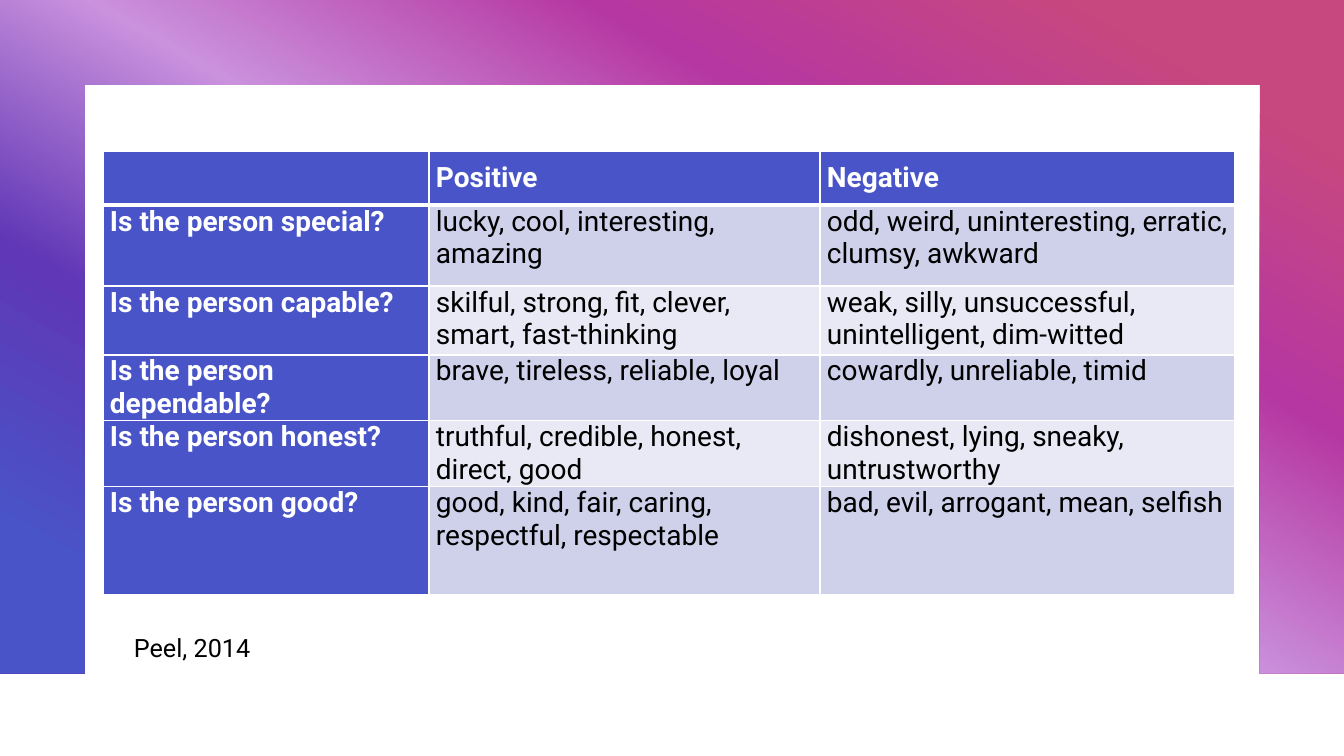
from lxml import etree
from pptx import Presentation
from pptx.dml.color import RGBColor
from pptx.enum.text import MSO_ANCHOR
from pptx.oxml import parse_xml
from pptx.util import Emu, Pt

MIDDLE, TOP = MSO_ANCHOR.MIDDLE, MSO_ANCHOR.TOP
NS = "http://schemas.openxmlformats.org/drawingml/2006/main"
FONT = "Roboto"
BLUE, WHITE, BLACK = "4854C7", "FFFFFF", "000000"
BANDS = ["CFD1EB", "E9E9F5"]
STOPS = [(10, "C7487E"), (30, "B637A1"), (50, "CA91DD"), (70, "6037B6"), (90, BLUE)]
COLS = [326, 391, 415]
ROWS = [54, 81, 69, 62, 62, 108]
WORDS = [
    ("", "Positive", "Negative"),
    ("Is the person special?", "lucky, cool, interesting, amazing",
     "odd, weird, uninteresting, erratic, clumsy, awkward"),
    ("Is the person capable?", "skilful, strong, fit, clever, smart, fast-thinking",
     "weak, silly, unsuccessful, unintelligent, dim-witted"),
    ("Is the person dependable?", "brave, tireless, reliable, loyal",
     "cowardly, unreliable, timid"),
    ("Is the person honest?", "truthful, credible, honest, direct, good",
     "dishonest, lying, sneaky, untrustworthy"),
    ("Is the person good?", "good, kind, fair, caring, respectful, respectable",
     "bad, evil, arrogant, mean, selfish"),
]


def px(n):
    return Emu(round(n * 914400 / 100.8))


def color(code):
    return RGBColor.from_string(code)


def style(para, size, code, bold=False):
    font = para.font
    font.name, font.size, font.bold = FONT, Pt(size), bold
    font.color.rgb = color(code)


def blend(shape, stops, angle):
    """Fill a shape with a linear gradient, angle clockwise in degrees."""
    shape.fill.background()
    props = shape._element.spPr
    marks = "".join(
        f'<a:gs pos="{pos * 1000}"><a:srgbClr val="{code}"/></a:gs>'
        for pos, code in stops)
    grad = parse_xml(
        f'<a:gradFill xmlns:a="{NS}" rotWithShape="1"><a:gsLst>{marks}</a:gsLst>'
        f'<a:lin ang="{angle * 60000}" scaled="0"/></a:gradFill>')
    props.replace(props.find(f"{{{NS}}}noFill"), grad)


def add_frame(slide, left, top, width, height):
    side, right, low = left + 85, left + width, top + height
    inner = right - 84
    points = [(right, top), (right, low), (inner, low), (inner, top + 85),
              (side, top + 85), (side, low), (left, low)]
    pen = slide.shapes.build_freeform(px(left), px(top))
    pen.add_line_segments([(px(x), px(y)) for x, y in points], close=True)
    frame = pen.convert_to_shape()
    frame.shadow.inherit = False
    frame.line.fill.background()
    blend(frame, STOPS, 120)


def set_edges(cell, widths):
    props = cell._tc.get_or_add_tcPr()
    for i, (side, width) in enumerate(widths.items()):
        line = etree.Element(f"{{{NS}}}ln{side}", w=str(Pt(width)))
        fill = etree.SubElement(line, f"{{{NS}}}solidFill")
        etree.SubElement(fill, f"{{{NS}}}srgbClr", val=WHITE)
        props.insert(i, line)


def fill_cell(cell, text, row, col):
    head = row == 0
    strong = head or col == 0
    cell.fill.solid()
    cell.fill.fore_color.rgb = color(BLUE if strong else BANDS[(row - 1) % 2])
    cell.margin_left = cell.margin_right = px(7)
    cell.margin_top = cell.margin_bottom = 0
    cell.vertical_anchor = MIDDLE if head else TOP
    cell.text = text
    style(cell.text_frame.paragraphs[0], 20, WHITE if strong else BLACK, strong)
    set_edges(cell, {"L": 1, "R": 1, "T": 3 if row == 1 else 1, "B": 3 if head else 1})


def add_grid(slide, left, top):
    table = slide.shapes.add_table(
        len(ROWS), len(COLS), px(left), px(top), px(sum(COLS)), px(sum(ROWS))).table
    for col, width in zip(table.columns, COLS):
        col.width = px(width)
    for r, (height, texts) in enumerate(zip(ROWS, WORDS)):
        table.rows[r].height = px(height)
        for c, text in enumerate(texts):
            fill_cell(table.cell(r, c), text, r, c)


def add_credit(slide, left, top, width, height):
    box = slide.shapes.add_textbox(px(left), px(top), px(width), px(height))
    box.text_frame.word_wrap = True
    box.text_frame.text = "Peel, 2014"
    style(box.text_frame.paragraphs[0], 18, BLACK)


def main():
    deck = Presentation()
    deck.slide_width, deck.slide_height = px(1344), px(756)
    slide = deck.slides.add_slide(deck.slide_layouts[6])
    add_frame(slide, 0, 0, 1344, 673)
    add_grid(slide, 103, 151)
    add_credit(slide, 124, 627, 225, 40)
    deck.save("out.pptx")


if __name__ == "__main__":
    main()
